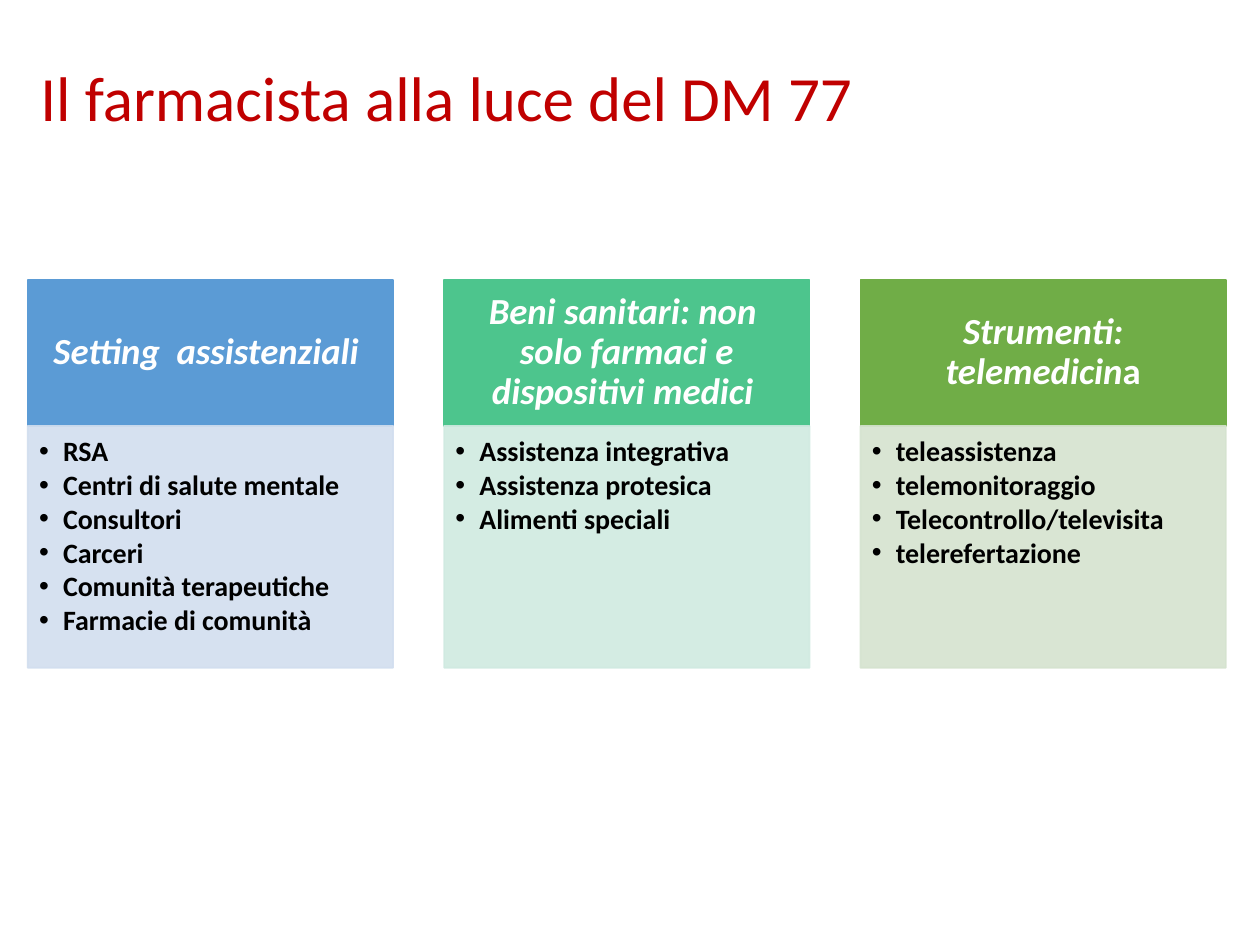
from lxml import etree
from pptx import Presentation
from pptx.dml.color import RGBColor
from pptx.enum.shapes import MSO_SHAPE
from pptx.enum.text import MSO_ANCHOR, PP_ALIGN
from pptx.oxml.ns import qn
from pptx.util import Inches, Pt

RECT = MSO_SHAPE.RECTANGLE
TOP, MIDDLE = MSO_ANCHOR.TOP, MSO_ANCHOR.MIDDLE
LEFT, CENTER = PP_ALIGN.LEFT, PP_ALIGN.CENTER

RED = RGBColor(0xC0, 0x00, 0x00)
WHITE = RGBColor(0xFF, 0xFF, 0xFF)
BLACK = RGBColor(0x00, 0x00, 0x00)
BLUE = RGBColor(0x5B, 0x9B, 0xD5)
TEAL = RGBColor(0x4D, 0xC5, 0x8D)
GREEN = RGBColor(0x70, 0xAD, 0x47)
PALE_BLUE = RGBColor(0xD2, 0xDE, 0xEF)
PALE_TEAL = RGBColor(0xD0, 0xEA, 0xE1)
PALE_GREEN = RGBColor(0xD5, 0xE3, 0xCF)

FONT = "Calibri"
START, STEP, WIDTH = 0.22, 3.305, 2.9
HEAD_TOP, HEAD_TALL = 2.22, 1.16
LIST_TALL = 1.92

COLUMNS = [
    (BLUE, PALE_BLUE, [("Setting  assistenziali ", True)],
     ["RSA", "Centri di salute mentale", "Consultori", "Carceri",
      "Comunità terapeutiche", "Farmacie di comunità"]),
    (TEAL, PALE_TEAL,
     [("Beni sanitari: non  solo farmaci e dispositivi medici ", True)],
     ["Assistenza integrativa", "Assistenza protesica", "Alimenti speciali"]),
    (GREEN, PALE_GREEN, [("Strumenti: telemedicin", True), ("a", False)],
     ["teleassistenza", "telemonitoraggio", "Telecontrollo/televisita",
      "telerefertazione"]),
]


class Deck:
    """Hold the style and the current slide, and draw its elements."""

    def __init__(self):
        self.prs = Presentation()
        self.prs.slide_width = Inches(10)
        self.prs.slide_height = Inches(7.5)
        self.slide = self.prs.slides.add_slide(self.prs.slide_layouts[5])

    def run(self, para, text, size, color, bold=False, italic=False):
        run = para.add_run()
        run.text = text
        font = run.font
        font.name, font.size = FONT, Pt(size)
        font.bold, font.italic = bold, italic
        font.color.rgb = color

    def title(self, text):
        shape = self.slide.shapes.title
        shape.left, shape.top = Inches(START), Inches(0.08)
        shape.width, shape.height = Inches(8.62), Inches(1.45)
        frame = shape.text_frame
        frame.word_wrap = True
        frame.vertical_anchor = MIDDLE
        para = frame.paragraphs[0]
        para.alignment, para.line_spacing = LEFT, 0.9
        self.run(para, text, 36, RED)

    def box(self, left, top, tall, color, anchor, insets):
        shape = self.slide.shapes.add_shape(
            RECT, Inches(left), Inches(top), Inches(WIDTH), Inches(tall))
        shape.shadow.inherit = False
        shape.fill.solid()
        shape.fill.fore_color.rgb = color
        shape.line.color.rgb = color
        shape.line.width = Pt(1)
        frame = shape.text_frame
        frame.word_wrap = True
        frame.vertical_anchor = anchor
        (frame.margin_left, frame.margin_top, frame.margin_right,
         frame.margin_bottom) = map(Inches, insets)
        return shape

    def head(self, left, color, parts):
        shape = self.box(left, HEAD_TOP, HEAD_TALL, color, MIDDLE,
                         (0.16, 0.09, 0.16, 0.09))
        para = shape.text_frame.paragraphs[0]
        para.alignment, para.line_spacing = CENTER, 0.9
        for text, italic in parts:
            self.run(para, text, 21, WHITE, True, italic)

    def fade(self, shape):
        for color in shape._element.spPr.iter(qn("a:srgbClr")):
            etree.SubElement(color, qn("a:alpha")).set("val", "90000")

    def bullet(self, para):
        props = para._p.get_or_add_pPr()
        props.set("marL", str(Inches(0.19)))
        props.set("indent", str(-Inches(0.19)))
        etree.SubElement(props, qn("a:buFont")).set("typeface", "Arial")
        etree.SubElement(props, qn("a:buChar")).set("char", "•")

    def list(self, left, color, items):
        shape = self.box(left, HEAD_TOP + HEAD_TALL, LIST_TALL, color, TOP,
                         (0.09, 0.09, 0.12, 0.14))
        self.fade(shape)
        frame = shape.text_frame
        for i, text in enumerate(items):
            para = frame.add_paragraph() if i else frame.paragraphs[0]
            self.bullet(para)
            para.level, para.alignment = 1, LEFT
            para.line_spacing, para.space_after = 0.9, Pt(2.1)
            self.run(para, text, 16, BLACK, True)


def main():
    deck = Deck()
    deck.title("Il farmacista alla luce del DM 77")
    for i, (color, pale, parts, items) in enumerate(COLUMNS):
        left = START + i * STEP
        deck.head(left, color, parts)
        deck.list(left, pale, items)
    deck.prs.save("out.pptx")


if __name__ == "__main__":
    main()
